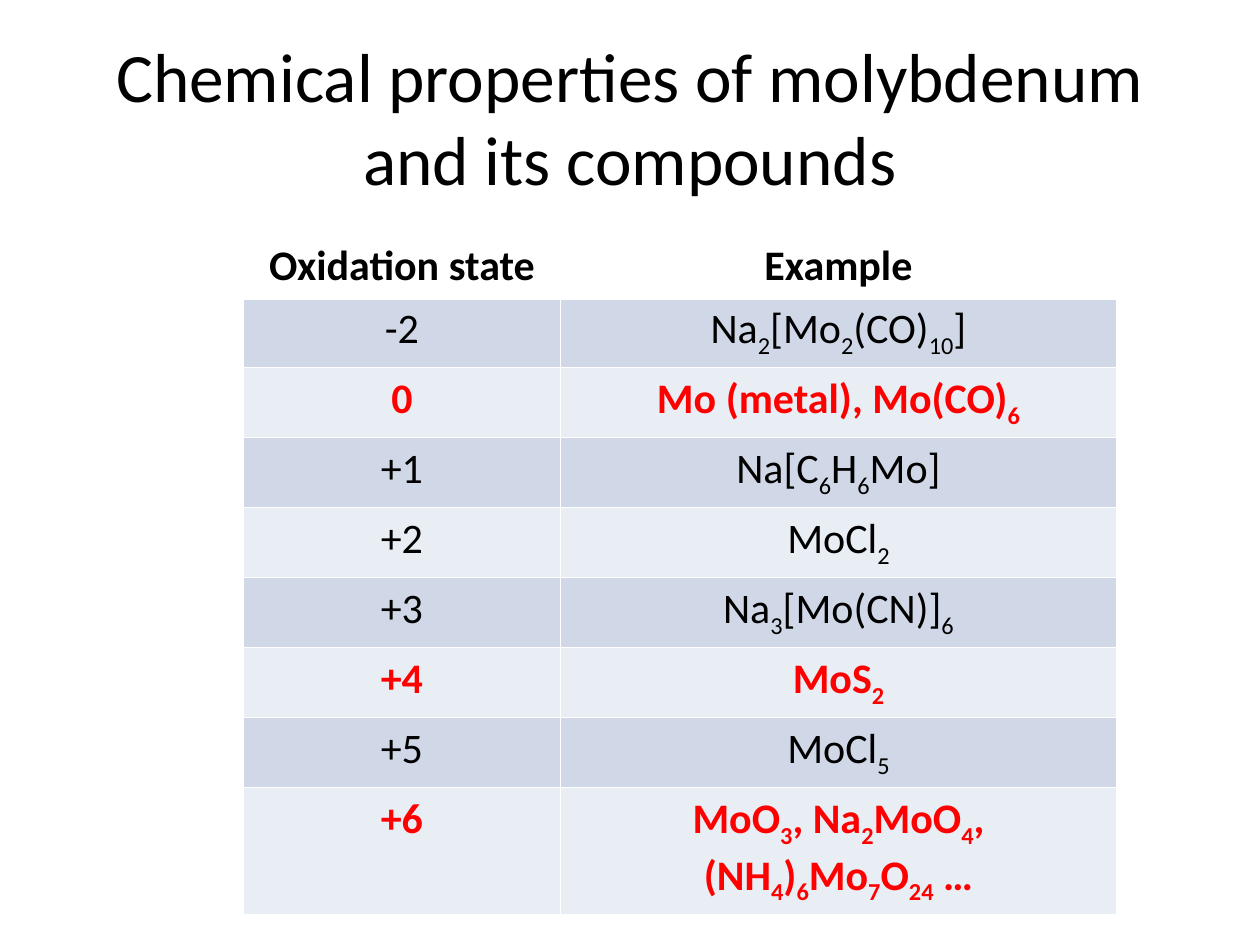
from dataclasses import dataclass
from itertools import product
from lxml.etree import SubElement
from pptx import Presentation
from pptx.dml.color import RGBColor
from pptx.enum.text import MSO_ANCHOR, PP_ALIGN
from pptx.oxml.ns import qn
from pptx.util import Inches, Pt


@dataclass(frozen=True)
class Theme:
    font: str = "Calibri"
    ink: str = "000000"
    hot: str = "FF0000"
    rule: str = "FFFFFF"
    bands: tuple[str, str] = ("D0D8E8", "E9EDF4")
    head: float = 39.6
    body: float = 24
    sub: int = -25000


@dataclass(frozen=True)
class Box:
    x: float
    y: float
    w: float
    h: float

    def place(self) -> tuple[int, int, int, int]:
        return (round(self.x * WIDE), round(self.y * HIGH),
                round(self.w * WIDE), round(self.h * HIGH))


@dataclass(frozen=True)
class State:
    number: str
    lines: tuple[str, ...]
    key: bool = False


THEME = Theme()
WIDE, HIGH = Inches(10), Inches(7.5)
TITLE = Box(0.05, 0.04, 0.9, 1 / 6)
GRID = Box(0.193, 0.248, 0.693, 4.9 / 7.5)
COLS = (Inches(2.52), Inches(4.41))
ROW = Inches(0.41)

STATES = (
    State("-2", ("Na~2~[Mo~2~(CO)~10~]",)),
    State("0", ("Mo (metal), Mo(CO)~6~",), True),
    State("+1", ("Na[C~6~H~6~Mo]",)),
    State("+2", ("MoCl~2~",)),
    State("+3", ("Na~3~[Mo(CN)]~6~",)),
    State("+4", ("MoS~2~",), True),
    State("+5", ("MoCl~5~",)),
    State("+6", ("MoO~3~, Na~2~MoO~4~,", "(NH~4~)~6~Mo~7~O~24~ …"), True),
)


def write(frame, lines: tuple[str, ...], size: float, tint: str, bold: bool) -> None:
    for row, line in enumerate(lines):
        para = frame.add_paragraph() if row else frame.paragraphs[0]
        para.alignment = PP_ALIGN.CENTER
        for turn, part in enumerate(line.split("~")):
            if not part:
                continue
            run = para.add_run()
            run.text = part
            run.font.name = THEME.font
            run.font.size = Pt(size)
            run.font.bold = bold
            run.font.color.rgb = RGBColor.from_string(tint)
            if turn % 2:
                run.font._element.set("baseline", str(THEME.sub))


def edge(cell, side: str, width: float) -> None:
    line = SubElement(cell._tc.get_or_add_tcPr(), qn(f"a:ln{side}"), w=str(Pt(width)))
    fill = SubElement(line, qn("a:solidFill"))
    SubElement(fill, qn("a:srgbClr"), val=THEME.rule)


def draw_title(slide, text: str) -> None:
    frame = slide.shapes.add_textbox(*TITLE.place()).text_frame
    frame.word_wrap = True
    frame.vertical_anchor = MSO_ANCHOR.MIDDLE
    write(frame, (text,), THEME.head, THEME.ink, False)


def draw_table(slide, states: tuple[State, ...]) -> None:
    rows = (State("Oxidation state", ("Example",)), *states)
    shape = slide.shapes.add_table(len(rows), len(COLS), *GRID.place())
    table = shape.table
    for col, width in zip(table.columns, COLS):
        col.width = width
    for row in table.rows:
        row.height = ROW
    shape.height = GRID.place()[3]
    for (i, state), j in product(enumerate(rows), range(len(COLS))):
        cell = table.cell(i, j)
        for side in "LRTB":
            thick = (i == 0 and side == "B") or (i == 1 and side == "T")
            edge(cell, side, 3 if thick else 1)
        if i:
            cell.fill.solid()
            cell.fill.fore_color.rgb = RGBColor.from_string(THEME.bands[(i - 1) % 2])
        else:
            cell.fill.background()
        lines = state.lines if j else (state.number,)
        tint = THEME.hot if state.key else THEME.ink
        write(cell.text_frame, lines, THEME.body, tint, state.key or i == 0)


def main() -> None:
    deck = Presentation()
    deck.slide_width, deck.slide_height = WIDE, HIGH
    slide = deck.slides.add_slide(deck.slide_layouts[6])
    draw_title(slide, "Chemical properties of molybdenum and its compounds")
    draw_table(slide, STATES)
    deck.save("out.pptx")


if __name__ == "__main__":
    main()
